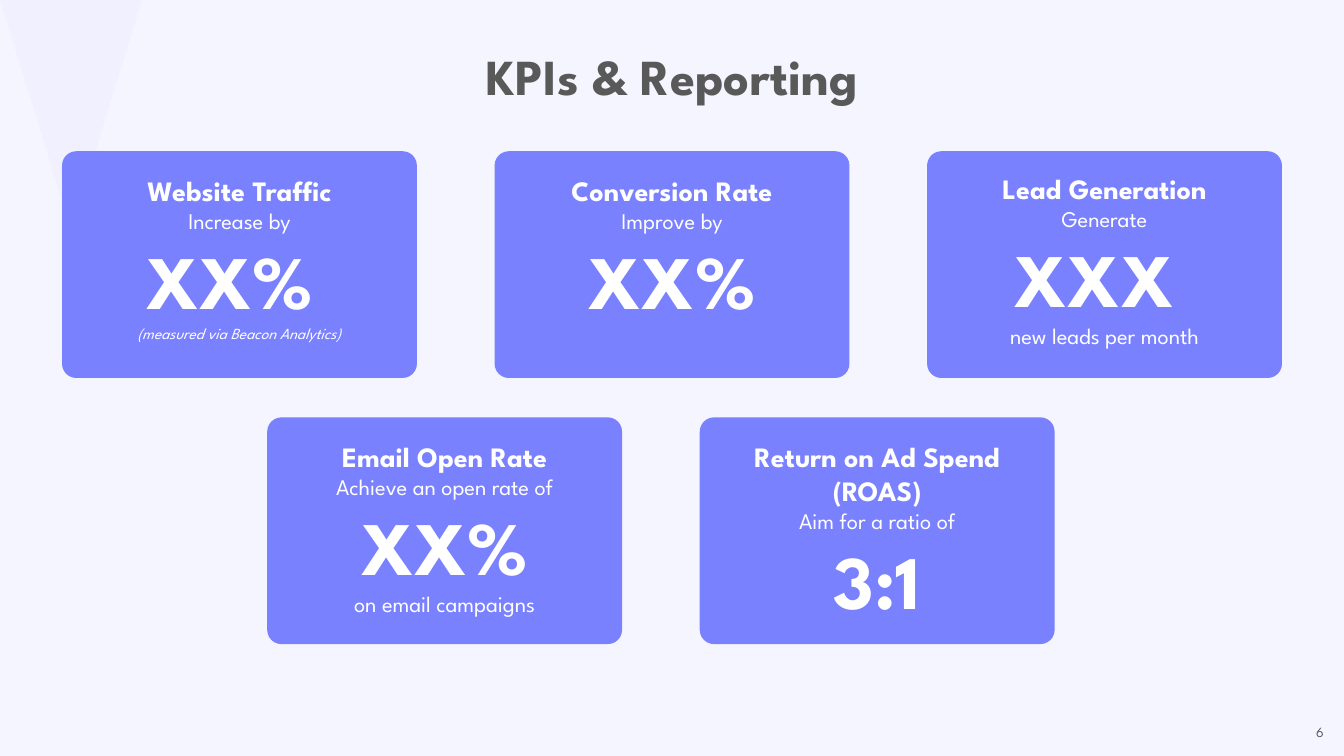
from dataclasses import dataclass

from lxml.etree import SubElement
from pptx import Presentation
from pptx.dml.color import RGBColor
from pptx.enum.shapes import MSO_SHAPE
from pptx.enum.text import MSO_ANCHOR, MSO_AUTO_SIZE, PP_ALIGN
from pptx.oxml.ns import qn
from pptx.util import Inches, Pt

SLIDE_WIDTH, SLIDE_HEIGHT = 13.33, 7.5
CARD_WIDTH, CARD_HEIGHT, CARD_GAP = 3.52, 2.25, 0.77
CARD_INSET = 0.35


@dataclass(frozen=True)
class Theme:
    font: str = "League Spartan"
    background: RGBColor = RGBColor(0xF5, 0xF5, 0xFF)
    accent: RGBColor = RGBColor(0xEC, 0xEC, 0xFF)
    card: RGBColor = RGBColor(0x7A, 0x81, 0xFF)
    dark: RGBColor = RGBColor(0x59, 0x59, 0x59)
    light: RGBColor = RGBColor(0xFF, 0xFF, 0xFF)
    title: int = 36
    heading: int = 20
    body: int = 16
    figure: int = 54
    note: int = 11
    number: int = 10


@dataclass(frozen=True)
class Kpi:
    name: str
    action: str
    figure: str
    detail: str = ""
    is_note: bool = False
    text_top: float = 0.17


THEME = Theme()
TOP_ROW = [
    Kpi("Website Traffic", "Increase by", "XX% ", "(measured via Beacon Analytics)", True),
    Kpi("Conversion Rate", "Improve by", "XX%"),
    Kpi("Lead Generation", "Generate", "XXX ", "new leads per month", text_top=0.15),
]
BOTTOM_ROW = [
    Kpi("Email Open Rate", "Achieve an open rate of", "XX%", "on email campaigns"),
    Kpi("Return on Ad Spend (ROAS)", "Aim for a ratio of", "3:1"),
]


def style_paragraph(paragraph, text, size, color, bold=False, italic=False,
                    alignment=PP_ALIGN.CENTER):
    paragraph.text = text
    paragraph.alignment = alignment
    font = paragraph.font
    font.name = THEME.font
    font.size = Pt(size)
    font.bold = bold
    font.italic = italic
    font.color.rgb = color


def add_filled_shape(slide, kind, box, color):
    shape = slide.shapes.add_shape(kind, *map(Inches, box))
    shape.shadow.inherit = False
    shape.fill.solid()
    shape.fill.fore_color.rgb = color
    shape.line.fill.background()
    return shape


def add_text_frame(slide, box):
    frame = slide.shapes.add_textbox(*map(Inches, box)).text_frame
    frame.word_wrap = True
    return frame


def add_backdrop(slide, box):
    slide.background.fill.solid()
    slide.background.fill.fore_color.rgb = THEME.background
    triangle = add_filled_shape(slide, MSO_SHAPE.ISOSCELES_TRIANGLE, box, THEME.accent)
    triangle.rotation = 180
    color = triangle.fill._xPr.find(qn("a:solidFill"))[0]
    SubElement(color, qn("a:alpha"), val="50000")


def add_title(slide, box):
    title = slide.shapes.title
    title.left, title.top, title.width, title.height = map(Inches, box)
    frame = title.text_frame
    frame.auto_size = MSO_AUTO_SIZE.NONE
    frame.vertical_anchor = MSO_ANCHOR.TOP
    style_paragraph(frame.paragraphs[0], "KPIs & Reporting", THEME.title, THEME.dark, True)


def add_card(slide, kpi, box):
    left, top, width, height = box
    card = add_filled_shape(slide, MSO_SHAPE.ROUNDED_RECTANGLE, box, THEME.card)
    card.adjustments[0] = 0.063
    frame = add_text_frame(slide, (left + CARD_INSET, top + kpi.text_top,
                                   width - 2 * CARD_INSET, height - 2 * kpi.text_top))
    lines = [
        (kpi.name, THEME.heading, True, False),
        (kpi.action, THEME.body, False, False),
        (kpi.figure, THEME.figure, True, False),
    ]
    if kpi.detail:
        size = THEME.note if kpi.is_note else THEME.body
        lines.append((kpi.detail, size, False, kpi.is_note))
    for index, (text, size, bold, italic) in enumerate(lines):
        paragraph = frame.add_paragraph() if index else frame.paragraphs[0]
        style_paragraph(paragraph, text, size, THEME.light, bold, italic)


def add_card_row(slide, kpis, center, top):
    pitch = CARD_WIDTH + CARD_GAP
    left = center - (len(kpis) * pitch - CARD_GAP) / 2
    for column, kpi in enumerate(kpis):
        add_card(slide, kpi, (left + column * pitch, top, CARD_WIDTH, CARD_HEIGHT))


def add_slide_number(slide, box):
    frame = add_text_frame(slide, box)
    frame.margin_top = frame.margin_bottom = Inches(0.08)
    frame.margin_right = Inches(0.2)
    style_paragraph(frame.paragraphs[0], "6", THEME.number, THEME.dark,
                    alignment=PP_ALIGN.RIGHT)


def build_kpi_slide(presentation):
    slide = presentation.slides.add_slide(presentation.slide_layouts[5])
    center = SLIDE_WIDTH / 2
    add_backdrop(slide, (0, 0, 1.41, 2.28))
    add_title(slide, (0.71, 0.4, 11.92, 0.71))
    add_card_row(slide, TOP_ROW, center, SLIDE_HEIGHT * 0.2)
    add_card_row(slide, BOTTOM_ROW, center - 0.11, SLIDE_HEIGHT * 0.552)
    add_slide_number(slide, (SLIDE_WIDTH - 0.9, 7.1, 0.9, 0.33))


def main():
    presentation = Presentation()
    presentation.slide_width = Inches(SLIDE_WIDTH)
    presentation.slide_height = Inches(SLIDE_HEIGHT)
    build_kpi_slide(presentation)
    presentation.save("out.pptx")


if __name__ == "__main__":
    main()
